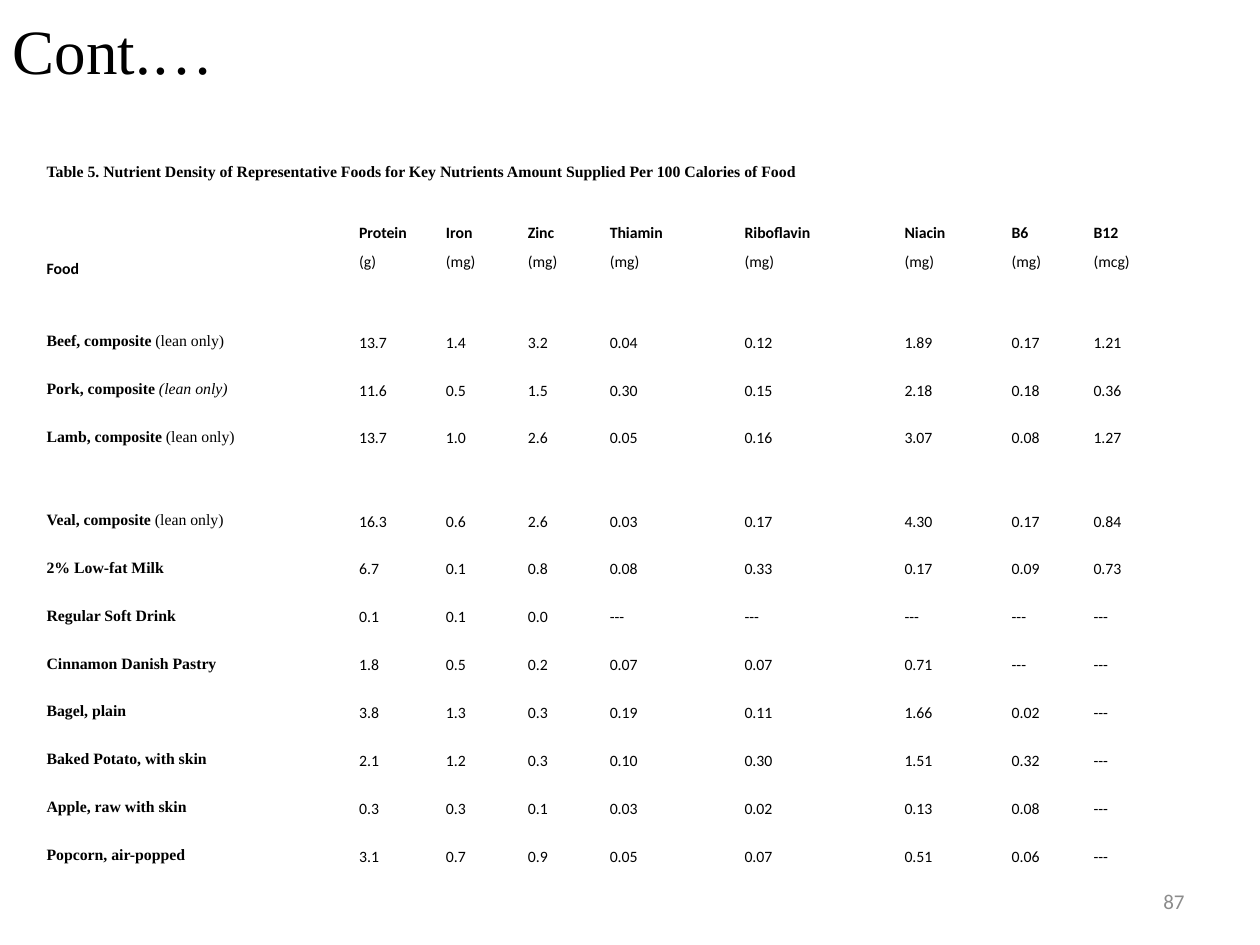
import dataclasses

import lxml.etree
import pptx
import pptx.dml.color
import pptx.enum.text
import pptx.oxml.ns
import pptx.util

ALIGN = pptx.enum.text.PP_ALIGN
ANCHOR = pptx.enum.text.MSO_ANCHOR
SERIF, SANS = "Times New Roman", "Calibri"
COLORS = {"text": "000000", "page number": "8C8C8C"}
SLIDE_WIDTH, SLIDE_HEIGHT = 10, 7.5
BODY_SIZE = 9
LINE_SPACING = 1.5
CELL_MARGIN = 0.04

# Table grid in inches
COLUMN_WIDTHS = (2.48, 0.69, 0.65, 0.65, 1.07, 1.27, 0.85, 0.65, 0.86)
CAPTION_HEIGHT, HEADER_HEIGHT, ROW_HEIGHT, TALL_ROW_HEIGHT = 0.66, 0.87, 0.38, 0.66


@dataclasses.dataclass
class Nutrient:
    name: str
    unit: str


@dataclasses.dataclass
class Food:
    name: str
    amounts: str
    note: str = ""
    italic_note: bool = False
    height: float = ROW_HEIGHT


CAPTION = ("Table 5. Nutrient Density of Representative Foods for Key Nutrients "
           "Amount Supplied Per 100 Calories of Food")
NUTRIENTS = [
    Nutrient("Protein", "(g)"), Nutrient("Iron", "(mg)"),
    Nutrient("Zinc", "(mg)"), Nutrient("Thiamin", "(mg)"),
    Nutrient("Riboflavin", "(mg)"), Nutrient("Niacin", "(mg)"),
    Nutrient("B6", "(mg)"), Nutrient("B12", "(mcg)"),
]
LEAN = " (lean only)"
FOODS = [
    Food("Beef, composite", "13.7 1.4 3.2 0.04 0.12 1.89 0.17 1.21", LEAN),
    Food("Pork, composite", "11.6 0.5 1.5 0.30 0.15 2.18 0.18 0.36", LEAN, italic_note=True),
    Food("Lamb, composite", "13.7 1.0 2.6 0.05 0.16 3.07 0.08 1.27", LEAN,
         height=TALL_ROW_HEIGHT),
    Food("Veal, composite", "16.3 0.6 2.6 0.03 0.17 4.30 0.17 0.84", LEAN),
    Food("2% Low-fat Milk", "6.7 0.1 0.8 0.08 0.33 0.17 0.09 0.73"),
    Food("Regular Soft Drink", "0.1 0.1 0.0 --- --- --- --- ---"),
    Food("Cinnamon Danish Pastry", "1.8 0.5 0.2 0.07 0.07 0.71 --- ---"),
    Food("Bagel, plain", "3.8 1.3 0.3 0.19 0.11 1.66 0.02 ---"),
    Food("Baked Potato, with skin", "2.1 1.2 0.3 0.10 0.30 1.51 0.32 ---"),
    Food("Apple, raw with skin", "0.3 0.3 0.1 0.03 0.02 0.13 0.08 ---"),
    Food("Popcorn, air-popped", "3.1 0.7 0.9 0.05 0.07 0.51 0.06 ---"),
]


def add_text(paragraph, text: str, *, font: str = SANS, size: float = BODY_SIZE,
             color: str = "text", bold: bool = False, italic: bool = False) -> None:
    run = paragraph.add_run()
    run.text = text
    run.font.name = font
    run.font.size = pptx.util.Pt(size)
    run.font.bold = bold
    run.font.italic = italic
    run.font.color.rgb = pptx.dml.color.RGBColor.from_string(COLORS[color])


def add_break(paragraph, size: float = BODY_SIZE) -> None:
    """Add a line break that keeps the height of the text around it."""
    paragraph.add_line_break()
    line_break = paragraph._p.findall(pptx.oxml.ns.qn("a:br"))[-1]
    lxml.etree.SubElement(line_break, pptx.oxml.ns.qn("a:rPr"), sz=str(size * 100))


def prepare_cell(cell, alignment=ALIGN.JUSTIFY, anchor=ANCHOR.TOP):
    """Format an empty cell and return its paragraph."""
    cell.fill.background()
    cell.margin_left = cell.margin_right = pptx.util.Inches(CELL_MARGIN)
    cell.margin_top = cell.margin_bottom = pptx.util.Inches(CELL_MARGIN)
    cell.vertical_anchor = anchor
    paragraph = cell.text_frame.paragraphs[0]
    paragraph.alignment = alignment
    paragraph.line_spacing = LINE_SPACING
    return paragraph


def draw_title(slide) -> None:
    title = slide.shapes.title
    title.left, title.top = 0, pptx.util.Inches(0.03)
    title.width, title.height = pptx.util.Inches(SLIDE_WIDTH), pptx.util.Inches(0.72)
    title.text_frame.vertical_anchor = ANCHOR.MIDDLE
    paragraph = title.text_frame.paragraphs[0]
    paragraph.alignment = ALIGN.LEFT
    add_text(paragraph, "Cont.…", font=SERIF, size=36)


def draw_table(slide) -> None:
    row_heights = [CAPTION_HEIGHT, HEADER_HEIGHT] + [food.height for food in FOODS]
    table = slide.shapes.add_table(
        len(row_heights), len(COLUMN_WIDTHS),
        pptx.util.Inches(0.33), pptx.util.Inches(1),
        pptx.util.Inches(sum(COLUMN_WIDTHS)), pptx.util.Inches(sum(row_heights))).table
    table.first_row = table.horz_banding = False
    for column, width in zip(table.columns, COLUMN_WIDTHS):
        column.width = pptx.util.Inches(width)
    for row, height in zip(table.rows, row_heights):
        row.height = pptx.util.Inches(height)

    # Caption across all columns
    table.cell(0, 0).merge(table.cell(0, len(COLUMN_WIDTHS) - 1))
    caption = prepare_cell(table.cell(0, 0), ALIGN.LEFT, ANCHOR.MIDDLE)
    add_text(caption, CAPTION, font=SERIF, bold=True)

    # Column headings
    add_text(prepare_cell(table.cell(1, 0), anchor=ANCHOR.MIDDLE), "Food", bold=True)
    for column, nutrient in enumerate(NUTRIENTS, start=1):
        heading = prepare_cell(table.cell(1, column))
        add_text(heading, nutrient.name, bold=True)
        add_break(heading)
        add_text(heading, nutrient.unit)

    # Foods and amounts
    for row, food in enumerate(FOODS, start=2):
        label = prepare_cell(table.cell(row, 0))
        add_text(label, food.name, font=SERIF, bold=True)
        if food.note:
            add_text(label, food.note, font=SERIF, italic=food.italic_note)
        for column, amount in enumerate(food.amounts.split(), start=1):
            add_text(prepare_cell(table.cell(row, column)), amount)


def draw_page_number(slide) -> None:
    box = slide.shapes.add_textbox(pptx.util.Inches(7.17), pptx.util.Inches(6.95),
                                   pptx.util.Inches(2.33), pptx.util.Inches(0.4))
    box.text_frame.word_wrap = True
    box.text_frame.vertical_anchor = ANCHOR.MIDDLE
    paragraph = box.text_frame.paragraphs[0]
    paragraph.alignment = ALIGN.RIGHT
    add_text(paragraph, "87", size=12, color="page number")


def main() -> None:
    presentation = pptx.Presentation()
    presentation.slide_width = pptx.util.Inches(SLIDE_WIDTH)
    presentation.slide_height = pptx.util.Inches(SLIDE_HEIGHT)
    slide = presentation.slides.add_slide(presentation.slide_layouts[5])
    draw_title(slide)
    draw_table(slide)
    draw_page_number(slide)
    presentation.save("out.pptx")


if __name__ == "__main__":
    main()
